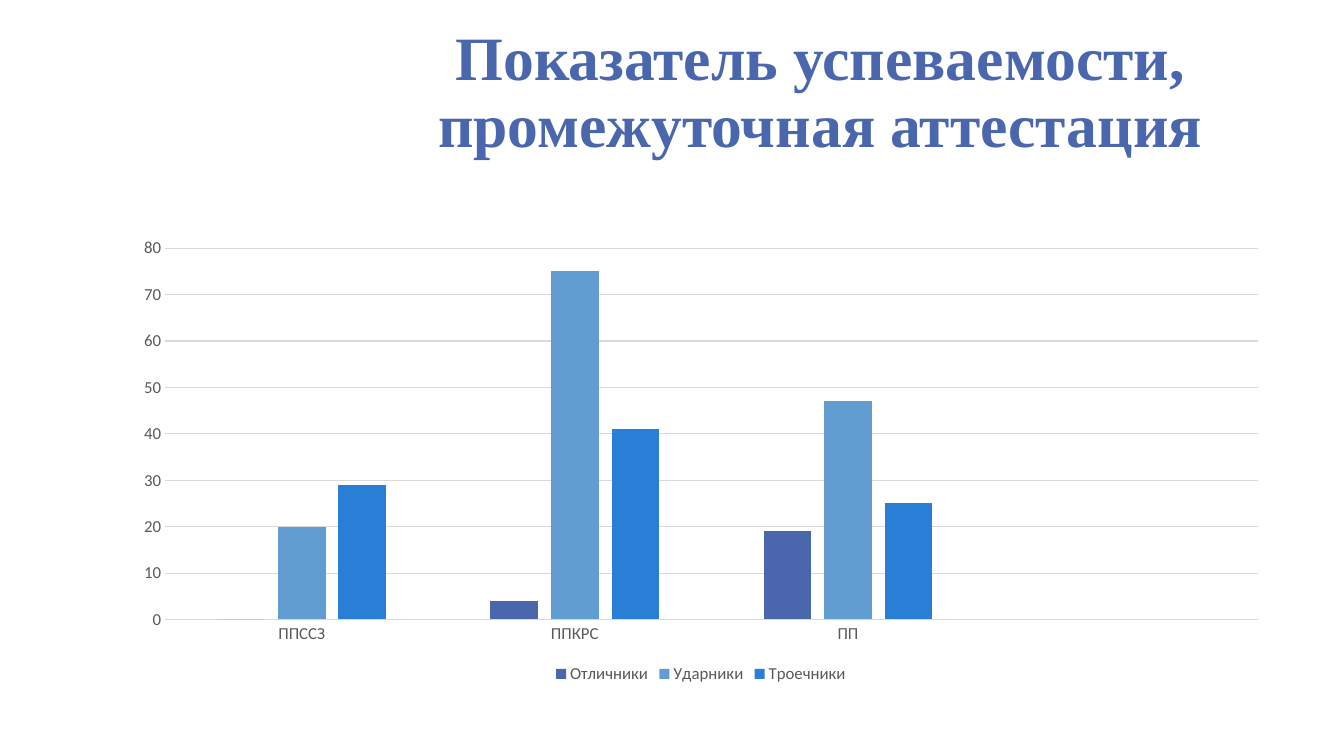
import pptx
import pptx.chart.data
import pptx.dml.color
import pptx.enum.chart
import pptx.enum.text
import pptx.util

RGBColor = pptx.dml.color.RGBColor
INDIGO = RGBColor(0x4A, 0x66, 0xAC)
SKY = RGBColor(0x62, 0x9D, 0xD1)
AZURE = RGBColor(0x29, 0x7F, 0xD5)
LABEL_GRAY = RGBColor(0x59, 0x59, 0x59)
LINE_GRAY = RGBColor(0xD9, 0xD9, 0xD9)

SLIDE_WIDTH = pptx.util.Inches(13.33)
SLIDE_HEIGHT = pptx.util.Inches(7.5)
TITLE_ONLY_LAYOUT = 5

# The last category is an empty slot at the right of the chart
GROUPS = ["ППССЗ", "ППКРС", "ПП", ""]
GRADES = [
    ("Отличники", [0, 4, 19, None], INDIGO),
    ("Ударники", [20, 75, 47, None], SKY),
    ("Троечники", [29, 41, 25, None], AZURE),
]


def area(left, top, width, height):
    """Turn shares of the slide's size into lengths."""
    return (int(left * SLIDE_WIDTH), int(top * SLIDE_HEIGHT),
            int(width * SLIDE_WIDTH), int(height * SLIDE_HEIGHT))


def format_font(font, name="Calibri", size=12, color=LABEL_GRAY, bold=False):
    font.name = name
    font.size = pptx.util.Pt(size)
    font.bold = bold
    font.color.rgb = color


def write_text(text_frame, text, align, line_spacing=1.0, **font_format):
    paragraph = text_frame.paragraphs[0]
    paragraph.alignment = align
    paragraph.line_spacing = line_spacing
    run = paragraph.add_run()
    run.text = text
    format_font(run.font, **font_format)


def format_line(line):
    line.color.rgb = LINE_GRAY
    line.width = pptx.util.Pt(0.75)


def add_title(slide, text):
    title = slide.shapes.title
    title.left, title.top, title.width, title.height = area(0.238, 0.028, 0.745, 0.193)
    title.text_frame.word_wrap = True
    title.text_frame.auto_size = pptx.enum.text.MSO_AUTO_SIZE.NONE
    title.text_frame.vertical_anchor = pptx.enum.text.MSO_ANCHOR.MIDDLE
    write_text(title.text_frame, text, pptx.enum.text.PP_ALIGN.CENTER,
               line_spacing=0.9, name="Times New Roman", size=44,
               color=INDIGO, bold=True)


def add_grades_chart(slide):
    data = pptx.chart.data.CategoryChartData()
    data.categories = GROUPS
    for name, values, _ in GRADES:
        data.add_series(name, values)
    chart = slide.shapes.add_chart(
        pptx.enum.chart.XL_CHART_TYPE.COLUMN_CLUSTERED,
        *area(0.09, 0.303, 0.863, 0.607), data).chart
    chart.has_title = False
    format_font(chart.font)

    # Columns
    plot = chart.plots[0]
    plot.gap_width = 219
    plot.overlap = -27
    plot.vary_by_categories = False
    for series, (_, _, color) in zip(plot.series, GRADES):
        series.format.fill.solid()
        series.format.fill.fore_color.rgb = color
        series.invert_if_negative = False

    # Axes
    for axis in (chart.category_axis, chart.value_axis):
        axis.major_tick_mark = pptx.enum.chart.XL_TICK_MARK.NONE
        axis.minor_tick_mark = pptx.enum.chart.XL_TICK_MARK.NONE
        format_font(axis.tick_labels.font)
    format_line(chart.category_axis.format.line)
    chart.value_axis.format.line.fill.background()
    chart.value_axis.minimum_scale = 0
    chart.value_axis.maximum_scale = 80
    chart.value_axis.major_unit = 10
    chart.value_axis.has_major_gridlines = True
    format_line(chart.value_axis.major_gridlines.format.line)

    # Legend
    chart.has_legend = True
    chart.legend.position = pptx.enum.chart.XL_LEGEND_POSITION.BOTTOM
    chart.legend.include_in_layout = False
    format_font(chart.legend.font)


def main():
    presentation = pptx.Presentation()
    presentation.slide_width = SLIDE_WIDTH
    presentation.slide_height = SLIDE_HEIGHT
    layout = presentation.slide_layouts[TITLE_ONLY_LAYOUT]
    slide = presentation.slides.add_slide(layout)
    add_title(slide, "Показатель успеваемости, промежуточная аттестация")
    add_grades_chart(slide)
    presentation.save("out.pptx")


if __name__ == "__main__":
    main()
